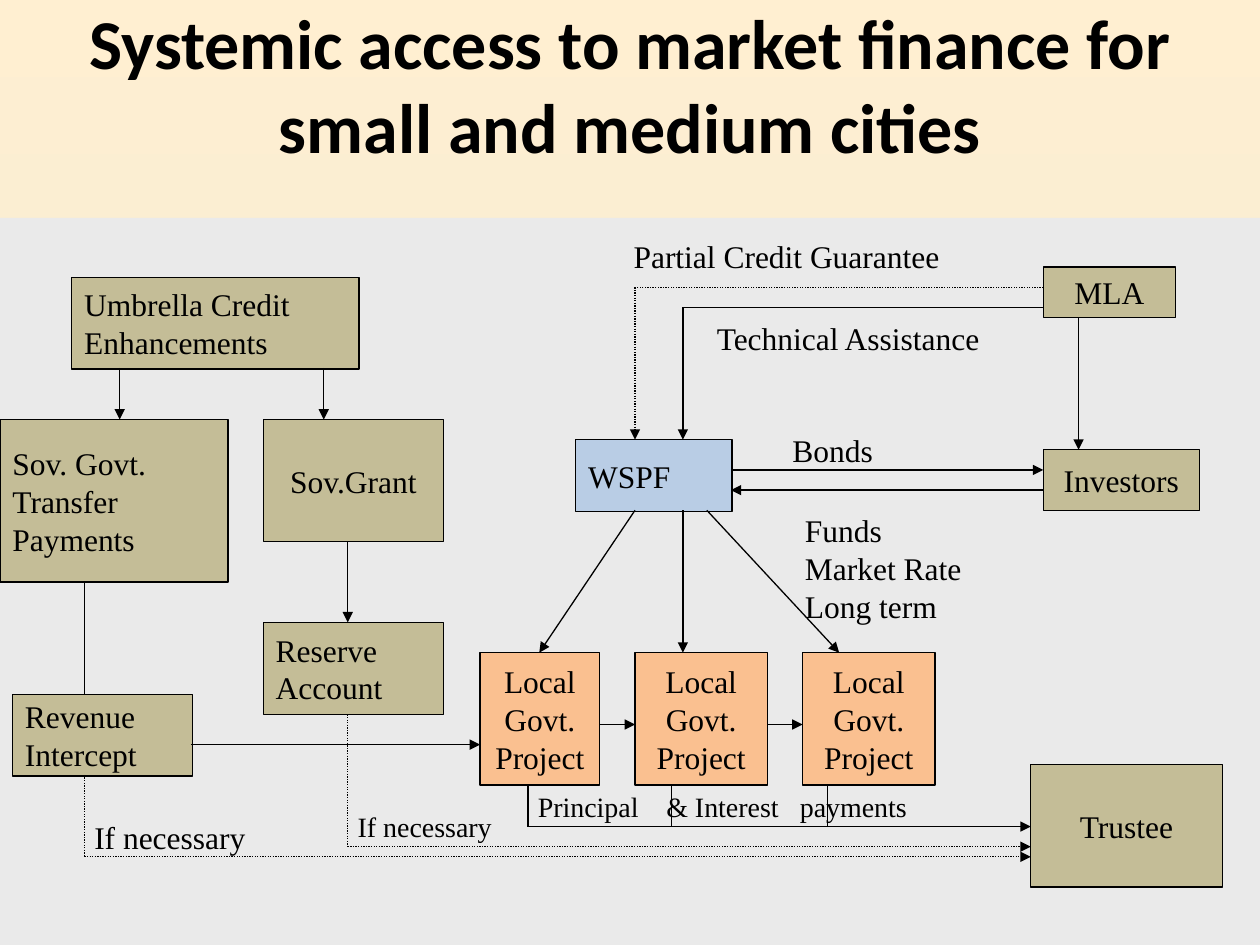
"""Build a slide charting how small and medium cities reach market finance."""
from dataclasses import dataclass
from itertools import pairwise

import lxml.etree
import pptx
import pptx.dml.color
import pptx.enum.dml
import pptx.enum.shapes
import pptx.enum.text
import pptx.oxml
import pptx.oxml.ns
import pptx.shapes.autoshape
import pptx.text.text
import pptx.util

Inches = pptx.util.Inches
RGBColor = pptx.dml.color.RGBColor
LEFT = pptx.enum.text.PP_ALIGN.LEFT
CENTER = pptx.enum.text.PP_ALIGN.CENTER
MIDDLE = pptx.enum.text.MSO_ANCHOR.MIDDLE
TOP = pptx.enum.text.MSO_ANCHOR.TOP

BLACK = RGBColor(0x00, 0x00, 0x00)
KHAKI = RGBColor(0xC4, 0xBD, 0x97)
BLUE = RGBColor(0xB9, 0xCD, 0xE5)
ORANGE = RGBColor(0xFA, 0xC0, 0x90)
PANEL_GRAY = RGBColor(0xEA, 0xEA, 0xEA)
BACKGROUND_STOPS = {
    0: RGBColor(0xFF, 0xEF, 0xD1),
    65: RGBColor(0xF0, 0xEB, 0xD5),
    100: RGBColor(0xD1, 0xC3, 0x9F),
}
LINE_WIDTH = pptx.util.Pt(0.75)
BODY_FONT = {"name": "Times New Roman", "size": pptx.util.Pt(18)}
TITLE_FONT = {"name": "Calibri", "size": pptx.util.Pt(40), "bold": True}


@dataclass(frozen=True)
class Box:
    """A filled, outlined node of the chart."""
    text: str
    left: float
    top: float
    width: float
    height: float
    color: RGBColor = KHAKI
    alignment: pptx.enum.text.PP_ALIGN = CENTER


@dataclass(frozen=True)
class Label:
    """A free-standing caption, with optional tab stops in inches."""
    text: str
    left: float
    top: float
    width: float
    height: float = 0.39
    size: int = 18
    tabs: tuple[float, ...] = ()


@dataclass(frozen=True)
class Route:
    """A chain of straight lines through the given points."""
    points: tuple[tuple[float, float], ...]
    dotted: bool = False
    arrow: bool = True


PROJECT = "Local\nGovt.\nProject"
BOXES = [
    Box("Umbrella Credit\nEnhancements", 0.57, 2.2, 2.28, 0.73, alignment=LEFT),
    Box("Sov.Grant", 2.09, 3.33, 1.43, 0.97),
    Box("Sov. Govt.\nTransfer\nPayments", 0, 3.33, 1.81, 1.29, alignment=LEFT),
    Box("MLA", 8.28, 2.12, 1.05, 0.4),
    Box("WSPF", 4.57, 3.49, 1.24, 0.57, BLUE, LEFT),
    Box("Reserve\nAccount", 2.09, 4.94, 1.43, 0.73, alignment=LEFT),
    Box("Revenue\nIntercept", 0.1, 5.51, 1.43, 0.65, alignment=LEFT),
    Box("Investors", 8.28, 3.57, 1.24, 0.48),
    Box("Trustee", 8.18, 6.07, 1.52, 0.97),
    *(Box(PROJECT, left, 5.18, width, 1.05, ORANGE)
      for left, width in ((3.81, 0.95), (5.04, 1.05), (6.37, 1.05))),
]
ROUTES = [
    *(Route(((x, 2.92), (x, 3.33))) for x in (0.95, 2.57)),
    Route(((2.76, 4.3), (2.76, 4.94))),
    Route(((8.28, 2.28), (5.04, 2.28), (5.04, 3.49)), dotted=True),
    Route(((8.28, 2.44), (5.42, 2.44), (5.42, 3.49))),
    Route(((8.56, 2.52), (8.56, 3.57))),
    Route(((5.8, 3.73), (8.28, 3.73))),
    Route(((8.28, 3.89), (5.8, 3.89))),
    Route(((0.67, 4.62), (0.67, 5.51)), arrow=False),
    Route(((1.52, 5.91), (3.81, 5.91))),
    *(Route(((start, 4.05), (end, 5.18)))
      for start, end in ((5.04, 4.28), (5.42, 5.42), (5.61, 6.66))),
    *(Route(((start, 5.75), (start + 0.28, 5.75))) for start in (4.76, 6.09)),
    Route(((4.19, 6.23), (4.19, 6.56), (8.18, 6.56))),
    *(Route(((x, 6.23), (x, 6.56)), arrow=False) for x in (5.33, 6.57)),
    Route(((2.76, 5.67), (2.76, 6.72), (8.18, 6.72)), dotted=True),
    Route(((0.67, 6.15), (0.67, 6.8), (8.18, 6.8)), dotted=True),
]
LABELS = [
    Label("Partial Credit Guarantee", 4.93, 1.83, 3.01),
    Label("Technical Assistance", 5.59, 2.48, 2.65),
    Label("Bonds", 6.19, 3.37, 0.98),
    Label("Funds\nMarket Rate\nLong term", 6.29, 4.01, 1.66, 0.97),
    Label("Principal\t& Interest\tpayments", 4.17, 6.22, 3.6, 0.36, 16, (1.02, 2.08)),
    Label("If necessary", 2.74, 6.38, 1.45, 0.36, 16),
    Label("If necessary", 0.65, 6.44, 1.6),
]


def apply_format(target: object, values: dict) -> None:
    """Set each named attribute of the target."""
    for name, value in values.items():
        setattr(target, name, value)


def write_text(frame: pptx.text.text.TextFrame, text: str, font: dict,
               alignment: pptx.enum.text.PP_ALIGN, frame_format: dict) -> None:
    """Fill a text frame with evenly formatted paragraphs."""
    frame.text = text
    apply_format(frame, frame_format)
    for paragraph in frame.paragraphs:
        paragraph.alignment = alignment
        for run in paragraph.runs:
            apply_format(run.font, font)
            run.font.color.rgb = BLACK


def add_rectangle(slide: pptx.slide.Slide, left: float, top: float, width: float,
                  height: float, color: RGBColor) -> pptx.shapes.autoshape.Shape:
    """Add a plain filled rectangle."""
    shape = slide.shapes.add_shape(
        pptx.enum.shapes.MSO_SHAPE.RECTANGLE, *map(Inches, (left, top, width, height)))
    shape.shadow.inherit = False
    shape.fill.solid()
    shape.fill.fore_color.rgb = color
    shape.line.fill.background()
    return shape


def draw_box(slide: pptx.slide.Slide, box: Box) -> None:
    """Draw one node with its text."""
    shape = add_rectangle(slide, box.left, box.top, box.width, box.height, box.color)
    shape.line.color.rgb = BLACK
    shape.line.width = LINE_WIDTH
    write_text(shape.text_frame, box.text, BODY_FONT, box.alignment,
               {"word_wrap": False, "vertical_anchor": MIDDLE})


def draw_label(slide: pptx.slide.Slide, label: Label) -> None:
    """Draw one caption."""
    shape = slide.shapes.add_textbox(
        *map(Inches, (label.left, label.top, label.width, label.height)))
    write_text(shape.text_frame, label.text,
               BODY_FONT | {"size": pptx.util.Pt(label.size)}, LEFT,
               {"word_wrap": True, "vertical_anchor": TOP})
    if label.tabs:
        properties = shape.text_frame.paragraphs[0]._p.get_or_add_pPr()
        tab_list = lxml.etree.SubElement(properties, pptx.oxml.ns.qn("a:tabLst"))
        for position in label.tabs:
            lxml.etree.SubElement(tab_list, pptx.oxml.ns.qn("a:tab"),
                                  pos=str(Inches(position)), algn="l")


def draw_route(slide: pptx.slide.Slide, route: Route) -> None:
    """Draw the lines of a route, with any arrowhead on the last."""
    for start, end in pairwise(route.points):
        connector = slide.shapes.add_connector(
            pptx.enum.shapes.MSO_CONNECTOR.STRAIGHT, *map(Inches, start + end))
        connector.line.color.rgb = BLACK
        connector.line.width = LINE_WIDTH
        if route.dotted:
            connector.line.dash_style = pptx.enum.dml.MSO_LINE.ROUND_DOT
        if route.arrow and end == route.points[-1]:
            lxml.etree.SubElement(connector.line._get_or_add_ln(),
                                  pptx.oxml.ns.qn("a:tailEnd"), type="triangle")
        lxml.etree.SubElement(connector._element.spPr, pptx.oxml.ns.qn("a:effectLst"))


def paint_background(slide: pptx.slide.Slide) -> None:
    """Give the slide a three-stop gradient from top to bottom."""
    fill = slide.background.fill
    fill.gradient()
    fill.gradient_angle = 270
    stop_list = slide._element.find(".//" + pptx.oxml.ns.qn("a:gsLst"))
    for stop in list(stop_list):
        stop_list.remove(stop)
    for percent, color in BACKGROUND_STOPS.items():
        stop = lxml.etree.SubElement(stop_list, pptx.oxml.ns.qn("a:gs"), pos=str(percent * 1000))
        lxml.etree.SubElement(stop, pptx.oxml.ns.qn("a:srgbClr"), val=str(color))


def main() -> None:
    """Build and save the presentation."""
    presentation = pptx.Presentation()
    apply_format(presentation, {"slide_width": Inches(10), "slide_height": Inches(7.5)})
    slide = presentation.slides.add_slide(presentation.slide_layouts[5])
    paint_background(slide)
    title = slide.shapes.title
    apply_format(title, {"left": Inches(0), "top": Inches(0),
                         "width": Inches(10), "height": Inches(1.33)})
    write_text(title.text_frame, "Systemic access to market finance for small and medium cities",
               TITLE_FONT, CENTER, {"word_wrap": True, "vertical_anchor": MIDDLE,
                                    "auto_size": pptx.enum.text.MSO_AUTO_SIZE.NONE})
    add_rectangle(slide, 0, 1.73, 10, 5.86, PANEL_GRAY)
    for items, draw in ((BOXES, draw_box), (ROUTES, draw_route), (LABELS, draw_label)):
        for item in items:
            draw(slide, item)
    presentation.save("out.pptx")


if __name__ == "__main__":
    main()
